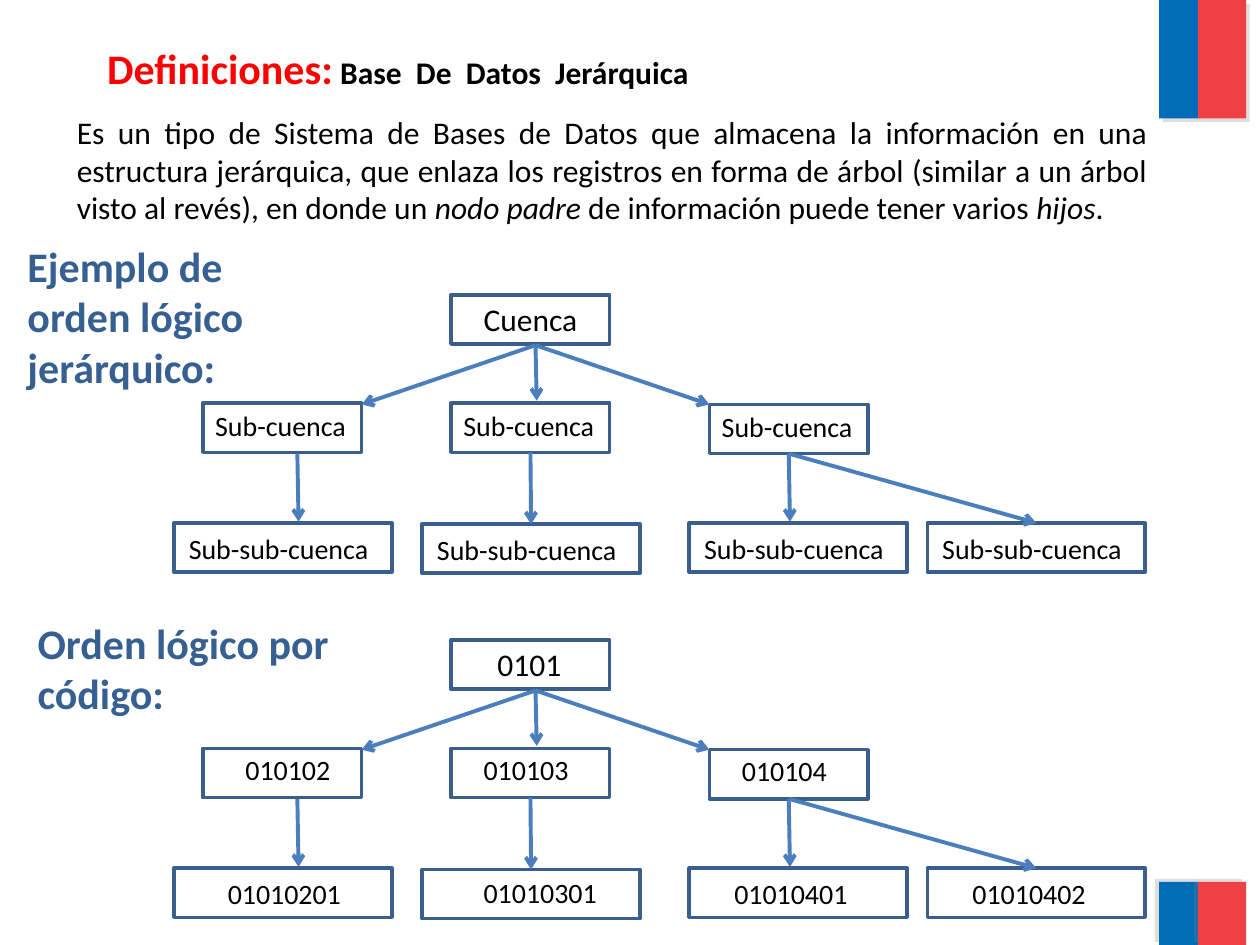
"""Build the slide that defines a hierarchical database with two example trees."""
from lxml.etree import SubElement
from pptx import Presentation
from pptx.dml.color import RGBColor
from pptx.enum.shapes import MSO_CONNECTOR, MSO_SHAPE
from pptx.enum.text import MSO_ANCHOR, MSO_AUTO_SIZE, PP_ALIGN
from pptx.oxml.ns import qn
from pptx.util import Inches, Pt

COLORS = {
    "blue": "006CB7", "coral": "EF4144", "shadow": "808080", "red": "FF0000",
    "black": "000000", "heading": "376092", "border": "3A5F8C", "arrow": "4B7EBC",
}


def place_text(box, area, spans, **frame_format):
    """Position a text shape and fill it with (text, color, size, bold, italic) spans."""
    for name, value in zip(("left", "top", "width", "height"), area):
        setattr(box, name, Inches(value))
    frame = box.text_frame
    frame_values = {"word_wrap": True, "auto_size": MSO_AUTO_SIZE.NONE,
                    "vertical_anchor": MSO_ANCHOR.TOP} | frame_format
    for name, value in frame_values.items():
        setattr(frame, name, value)
    para = frame.paragraphs[0]
    for text, color, size, bold, italic in spans:
        span = para.add_run()
        span.text = text
        font_values = {"name": "Calibri", "size": Pt(size), "bold": bold, "italic": italic}
        for name, value in font_values.items():
            setattr(span.font, name, value)
        span.font.color.rgb = RGBColor.from_string(COLORS[color])
    return para


def add_rectangle(page, area, fill=None, border=None):
    """Add a rectangle that has either a fill or a border."""
    shape = page.shapes.add_shape(MSO_SHAPE.RECTANGLE, *map(Inches, area))
    shape.shadow.inherit = False
    if fill:
        shape.fill.solid()
        shape.fill.fore_color.rgb = RGBColor.from_string(COLORS[fill])
    else:
        shape.fill.background()
    if border:
        shape.line.color.rgb = RGBColor.from_string(COLORS[border])
        shape.line.width = Pt(2)
    else:
        shape.line.fill.background()
    return shape


deck = Presentation()
deck.slide_width, deck.slide_height = Inches(10), Inches(7.5)
page = deck.slides.add_slide(deck.slide_layouts[1])

for top, height, angle in ((0, 0.94, 45), (7, 0.5, 215)):
    for left, width, color in ((9.2, 0.31, "blue"), (9.51, 0.38, "coral")):
        bar = add_rectangle(page, (left, top, width, height), fill=color)
        effects = bar._element.spPr.find(qn("a:effectLst"))
        shadow = SubElement(effects, qn("a:outerShdw"), blurRad="0", dist=str(Pt(3)),
                            dir=str(angle * 60000), algn="ctr", rotWithShape="0")
        shade = SubElement(shadow, qn("a:srgbClr"), val=COLORS["shadow"])
        SubElement(shade, qn("a:alpha"), val="25000")

title_para = place_text(
    page.shapes.title, (0.75, 0.29, 4.87, 0.5),
    [("Definiciones:", "red", 24, True, False),
     (" Base  De  Datos  Jerárquica", "black", 18, True, False)],
    word_wrap=False)
title_para.alignment = PP_ALIGN.LEFT

definition = [
    ("Es un tipo de Sistema de Bases de Datos que almacena la información en una "
     "estructura jerárquica, que enlaza los registros en forma de árbol (similar a un "
     "árbol visto al revés), en donde un ", False),
    ("nodo padre", True),
    (" de información puede tener varios ", False),
    ("hijos", True),
    (".", False),
]
body_para = place_text(
    page.placeholders[1], (0.51, 0.84, 8.7, 1.01),
    [(text, "black", 18, False, italic) for text, italic in definition],
    vertical_anchor=MSO_ANCHOR.MIDDLE)
body_format = body_para._p.get_or_add_pPr()
body_format.set("marL", "0")
body_format.set("indent", "0")
SubElement(body_format, qn("a:buNone"))
body_para.alignment = PP_ALIGN.JUSTIFY
body_para.space_before = Pt(0)

NODES = {
    "root": (3.58, 2.34, 1.26), "left": (1.61, 3.2, 1.26), "middle": (3.58, 3.2, 1.26),
    "right": (5.63, 3.21, 1.26), "left leaf": (1.38, 4.15, 1.73),
    "middle leaf": (3.35, 4.16, 1.73), "right leaf": (5.47, 4.15, 1.73),
    "far leaf": (7.36, 4.15, 1.73),
}
ARROWS = [
    ((4.25, 2.74), (2.87, 3.21), None, None),
    ((4.25, 2.74), (4.26, 3.18), None, None),
    ((4.25, 2.74), (5.63, 3.21), None, None),
    ((2.36, 3.6), (2.37, 4.14), None, None),
    ((4.21, 3.6), (4.22, 4.14), "middle", "middle leaf"),
    ((6.26, 3.6), (6.27, 4.14), "right", None),
    ((6.26, 3.6), (8.23, 4.15), "right", "far leaf"),
]
ACCOUNT_LABELS = {
    "root": ("Cuenca", 3.74, 2.33), "left": ("Sub-cuenca", 1.61, 3.19),
    "middle": ("Sub-cuenca", 3.58, 3.19), "right": ("Sub-cuenca", 5.63, 3.2),
    "left leaf": ("Sub-sub-cuenca", 1.4, 4.17), "middle leaf": ("Sub-sub-cuenca", 3.37, 4.18),
    "right leaf": ("Sub-sub-cuenca", 5.49, 4.17), "far leaf": ("Sub-sub-cuenca", 7.38, 4.17),
}
CODE_LABELS = {
    "root": ("0101", 3.85, 5.07), "left": ("010102", 1.85, 5.92),
    "middle": ("010103", 3.74, 5.92), "right": ("010104", 5.79, 5.93),
    "left leaf": ("01010201", 1.71, 6.91), "middle leaf": ("01010301", 3.74, 6.9),
    "right leaf": ("01010401", 5.73, 6.91), "far leaf": ("01010402", 7.62, 6.91),
}
LABEL_WIDTHS = {"Cuenca": 1.02, "Sub-cuenca": 1.26, "Sub-sub-cuenca": 1.63,
                "0101": 0.9}
CODE_WIDTHS = {6: 0.94, 8: 1.24}

for drop, labels in ((0, ACCOUNT_LABELS), (2.74, CODE_LABELS)):
    boxes = {}
    for name, (left, top, width) in NODES.items():
        boxes[name] = add_rectangle(page, (left, top + drop, width, 0.39), border="border")
        text, text_left, text_top = labels[name]
        text_width = LABEL_WIDTHS.get(text) or CODE_WIDTHS[len(text)]
        size, text_height = (18, 0.4) if name == "root" else (16, 0.37)
        place_text(page.shapes.add_textbox(0, 0, 0, 0),
                   (text_left, text_top, text_width, text_height),
                   [(text, "black", size, False, False)])
    for (start_x, start_y), (end_x, end_y), parent, child in ARROWS:
        arrow = page.shapes.add_connector(
            MSO_CONNECTOR.STRAIGHT, Inches(start_x), Inches(start_y + drop),
            Inches(end_x), Inches(end_y + drop))
        if parent:
            arrow.begin_connect(boxes[parent], 2)
        if child:
            arrow.end_connect(boxes[child], 0)
        arrow.line.color.rgb = RGBColor.from_string(COLORS["arrow"])
        arrow.line.width = Pt(2.25)
        properties = arrow._element.spPr
        SubElement(properties.find(qn("a:ln")), qn("a:tailEnd"), type="arrow")
        SubElement(properties, qn("a:effectLst"))

for heading, area in (
    ("Ejemplo de orden lógico jerárquico:", (0.12, 1.86, 2.2, 1.31)),
    ("Orden lógico por código:", (0.2, 4.85, 2.76, 0.91)),
):
    place_text(page.shapes.add_textbox(0, 0, 0, 0), area,
               [(heading, "heading", 24, True, False)])

deck.save("out.pptx")
